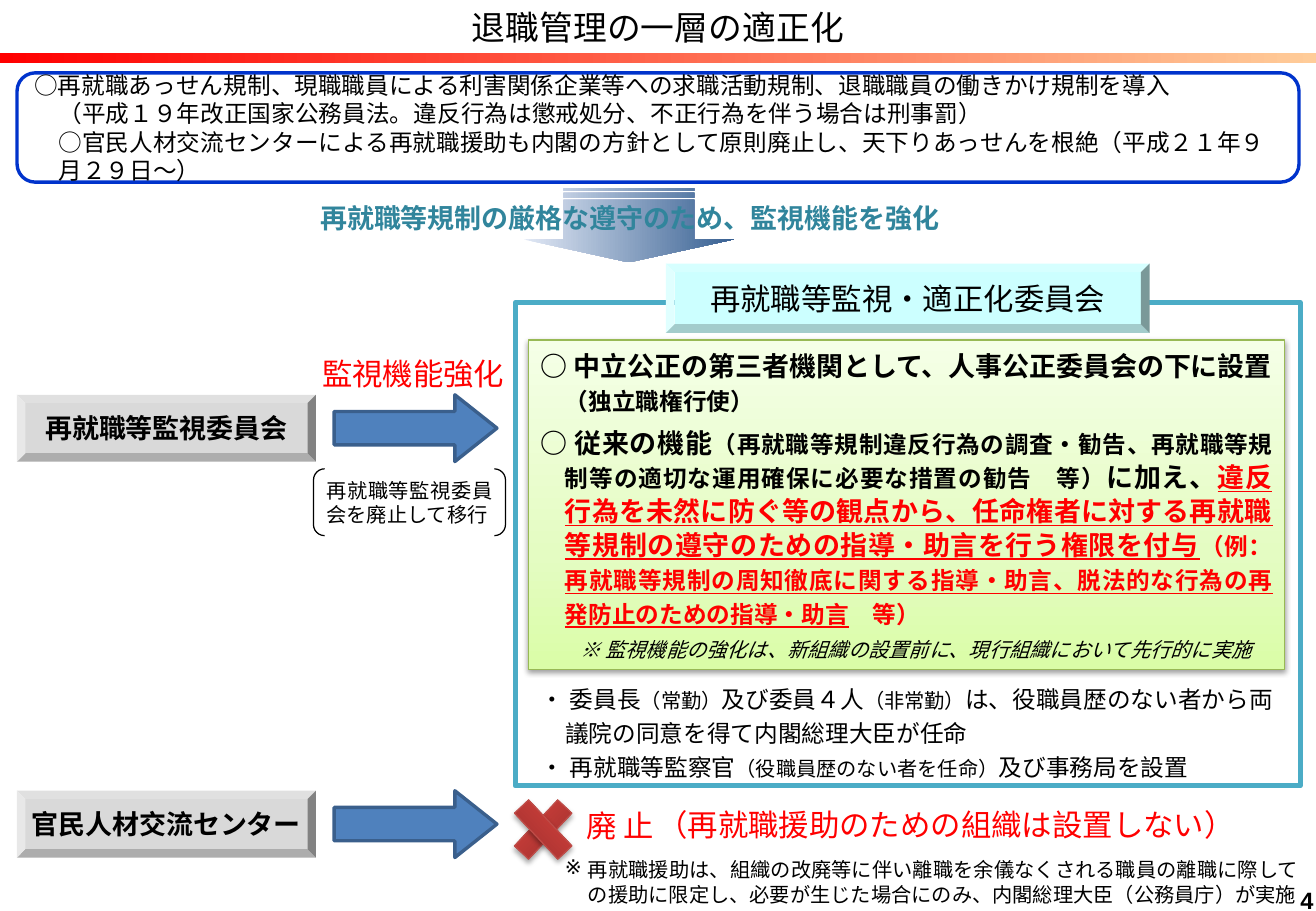
from lxml import etree
from pptx import Presentation
from pptx.dml.color import RGBColor
from pptx.enum.shapes import MSO_SHAPE
from pptx.enum.text import MSO_ANCHOR, MSO_AUTO_SIZE, PP_ALIGN
from pptx.oxml import parse_xml
from pptx.oxml.ns import nsdecls, qn
from pptx.util import Pt

PX = 9144
GOTHIC = "Noto Sans CJK JP"
COLORS = {
    "black": "000000", "white": "FFFFFF", "red": "FF0000", "peach": "FFCC99",
    "gray": "D9D9D9", "cyan": "CCFFFF", "blue": "4F81BD", "blue edge": "3A5F8C",
    "navy": "0033CC", "teal": "4BACC6", "teal text": "31859C",
    "mist": "E1E8F5", "steel": "376092", "green edge": "98B955",
    "green": "DAFDA7", "green mid": "E4FCC2", "green pale": "F5FFE7",
    "cross edge": "BF4C48", "cross dark": "9C2F2D", "cross mid": "CB3E3A", "cross": "CE3B37",
}
CROSS_BLEND = [(0, "cross dark"), (80, "cross mid"), (100, "cross")]
GREEN_BLEND = [(0, "green"), (35, "green mid"), (100, "green pale")]


def inside(box, left, top, width, height):
    """Return a px frame given relative to the corner of a box."""
    return box[0] + left, box[1] + top, width, height


def emu(frame):
    """Turn a px frame into EMU lengths."""
    return [length * PX for length in frame]


def add_shape(page, kind, frame, fill=None, line=None, weight=1, adjust=()):
    """Add a flat preset shape."""
    shape = page.shapes.add_shape(kind, *emu(frame))
    shape.shadow.inherit = False
    for index, value in enumerate(adjust):
        shape.adjustments[index] = value
    if fill:
        shape.fill.solid()
        shape.fill.fore_color.rgb = RGBColor.from_string(COLORS[fill])
    else:
        shape.fill.background()
    if line:
        shape.line.color.rgb = RGBColor.from_string(COLORS[line])
        shape.line.width = Pt(weight)
    else:
        shape.line.fill.background()
    return shape


def blend(shape, stops, angle, turn=1):
    """Give a shape a linear gradient."""
    marks = "".join(f'<a:gs pos="{place * 1000}"><a:srgbClr val="{COLORS[name]}"/></a:gs>'
                    for place, name in stops)
    gradient = parse_xml(
        f'<a:gradFill {nsdecls("a")} rotWithShape="{turn}"><a:gsLst>{marks}</a:gsLst>'
        f'<a:lin ang="{angle * 60000}" scaled="0"/></a:gradFill>')
    shape.fill.gradient()
    old = shape.element.spPr.find(qn("a:gradFill"))
    old.getparent().replace(old, gradient)


def cast_shadow(shape, opacity, blur, distance):
    """Give a shape a black shadow that falls straight down."""
    shape.element.spPr.find(qn("a:effectLst")).append(parse_xml(
        f'<a:outerShdw {nsdecls("a")} blurRad="{Pt(blur)}" dist="{Pt(distance)}" '
        f'dir="5400000" rotWithShape="0"><a:srgbClr val="{COLORS["black"]}">'
        f'<a:alpha val="{opacity * 1000}"/></a:srgbClr></a:outerShdw>'))


def set_frame(shape, anchor=MSO_ANCHOR.MIDDLE, inset=(10, 5, 10, 5), wrap=True):
    """Set wrapping, anchor and insets of a shape's text and return the shape."""
    frame = shape.text_frame
    frame.auto_size = MSO_AUTO_SIZE.NONE
    frame.word_wrap = wrap
    frame.vertical_anchor = anchor
    frame.margin_left, frame.margin_top, frame.margin_right, frame.margin_bottom = emu(inset)
    return shape


def add_box(page, frame, **layout):
    """Add a text box."""
    return set_frame(page.shapes.add_textbox(*emu(frame)), **layout)


def write(shape, spans, align=PP_ALIGN.LEFT, margin=0, indent=0, line=None, after=0,
          bullet=None, **look):
    """Write one paragraph from a text or from (text, format) spans."""
    frame = shape.text_frame
    para = frame.add_paragraph() if frame.text else frame.paragraphs[0]
    para.alignment = align
    para.space_before, para.space_after = Pt(0), Pt(after)
    if line:
        para.line_spacing = Pt(line)
    settings = para._p.get_or_add_pPr()
    settings.set("marL", str(margin * PX))
    settings.set("indent", str(indent * PX))
    if bullet:
        etree.SubElement(settings, qn("a:buChar")).set("char", bullet)
    for text, change in [(spans, {})] if isinstance(spans, str) else spans:
        if text == "\n":
            para.add_line_break()
            continue
        style = {"size": 14, "font": "Arial", "color": "black", "bold": False,
                 "italic": False, "underline": False, **look, **change}
        span = para.add_run()
        span.text = text
        span.font.size = Pt(style["size"])
        span.font.bold, span.font.italic = style["bold"], style["italic"]
        span.font.underline = style["underline"]
        span.font.color.rgb = RGBColor.from_string(COLORS[style["color"]])
        span.font.name = style["font"]
        etree.SubElement(span._r.get_or_add_rPr(), qn("a:ea")).set("typeface", GOTHIC)


def add_heading(page, box):
    """Place the title and the colour band below it."""
    title = page.shapes.title
    title.left, title.top, title.width, title.height = emu(inside(box, 0, 0, box[2], 44))
    set_frame(title, wrap=False)
    write(title, "退職管理の一層の適正化", PP_ALIGN.CENTER, size=20, font=GOTHIC)
    band = add_shape(page, MSO_SHAPE.RECTANGLE, inside(box, 0, 44, box[2], 8))
    blend(band, [(0, "red"), (100, "peach")], 0)


def add_summary(page, box):
    """Place the rounded box with the measures taken so far."""
    shape = set_frame(add_shape(page, MSO_SHAPE.ROUNDED_RECTANGLE, box, "white", "navy", 2),
                      inset=(10, 8, 10, 8))
    write(shape, [
        ("○再就職あっせん規制、現職職員による利害関係企業等への求職活動規制、退職職員の働きかけ規制を導入", {}),
        ("\n", {}),
        ("（平成１９年改正国家公務員法。違反行為は懲戒処分、不正行為を伴う場合は刑事罰）", {}),
    ], margin=20, indent=-20)
    write(shape, "○官民人材交流センターによる再就職援助も内閣の方針として原則廃止し、"
                 "天下りあっせんを根絶（平成２１年９月２９日～）", margin=20)


def add_purpose(page, box):
    """Place the downward arrow and the statement across it."""
    arrow = add_shape(page, MSO_SHAPE.STRIPED_RIGHT_ARROW, inside(box, 260, -59, 61, 173),
                      adjust=(0.62, 0.31))
    arrow.rotation = 90
    blend(arrow, [(0, "mist"), (100, "steel")], 0, turn=0)
    write(add_box(page, box), "再就職等規制の厳格な遵守のため、監視機能を強化",
          PP_ALIGN.CENTER, size=16, font=GOTHIC, color="teal text", bold=True)


def add_plate(page, frame, text, fill, **look):
    """Place a bevelled name plate."""
    plate = set_frame(add_shape(page, MSO_SHAPE.BEVEL, frame, fill, adjust=(0.125,)), wrap=False)
    write(plate, text, PP_ALIGN.CENTER, **look)


def add_transfer(page, box, name):
    """Place a present body and the arrow to its future."""
    add_plate(page, inside(box, 0, 0, 246, box[3]), name, "gray", size=16, bold=True)
    add_shape(page, MSO_SHAPE.RIGHT_ARROW, inside(box, 261, 0, 134, box[3]),
              "blue", "blue edge", 2, (0.5, 0.63))


def add_transfer_notes(page, box):
    """Place the notes above and below the upper arrow."""
    label = add_box(page, inside(box, 0, 0, 188, 64), inset=(12, 0, 8, 0), wrap=False)
    write(label, "監視機能強化", PP_ALIGN.CENTER, size=18, color="red")
    bracket = set_frame(add_shape(page, MSO_SHAPE.DOUBLE_BRACKET, inside(box, 14, 111, 158, 55),
                                  line="black", weight=0.75), inset=(8, 5, 8, 5))
    write(bracket, "再就職等監視委員会を廃止して移行", PP_ALIGN.JUSTIFY, after=12,
          size=12, font=GOTHIC)


def add_commission(page, box):
    """Place the panel on the new commission."""
    panel = set_frame(add_shape(page, MSO_SHAPE.RECTANGLE, inside(box, 0, 32, 646, 398),
                                "white", "teal", 3), MSO_ANCHOR.BOTTOM, (12, 20, 12, 4))
    small = {"size": 12}
    item = {"margin": 29, "indent": -20, "line": 20, "font": GOTHIC}
    write(panel, [("・ 委員長", {}), ("（常勤）", small), ("及び委員４人", {}), ("（非常勤）", small),
                  ("は、役職員歴のない者から両議院の同意を得て内閣総理大臣が任命", {})], **item)
    write(panel, [("・ 再就職等監察官", {}), ("（役職員歴のない者を任命）", small),
                  ("及び事務局を設置", {})], after=3, **item)
    add_plate(page, inside(box, 124, 0, 398, 57), "再就職等監視・適正化委員会", "cyan", size=18)

    duties = set_frame(add_shape(page, MSO_SHAPE.RECTANGLE, inside(box, 11, 63, 622, 271),
                                 line="green edge", weight=0.75), inset=(10, 4, 10, 4))
    blend(duties, GREEN_BLEND, 270)
    cast_shadow(duties, 38, 3.1, 1.6)
    minor = {"size": 14}
    red = {"color": "red"}
    duty = {"align": PP_ALIGN.JUSTIFY, "margin": 20, "indent": -20, "line": 20,
            "size": 16, "font": GOTHIC, "bold": True}
    write(duties, [("○ 中立公正の第三者機関として、人事公正委員会の下に設置", {}),
                   ("（独立職権行使）", minor)], after=6, **duty)
    write(duties, [
        ("○ 従来の機能", {}),
        ("（再就職等規制違反行為の調査・勧告、再就職等規制等の適切な運用確保に必要な措置の勧告　等）", minor),
        ("に加え、", {}),
        ("違反行為を未然に防ぐ等の観点から、任命権者に対する再就職等規制の遵守のための指導・助言を行う権限を付与",
         {**red, "underline": True}),
        ("（例：", {**red, **minor}),
        ("再就職等規制の周知徹底に関する指導・助言、脱法的な行為の再発防止のための指導・助言",
         {**red, **minor, "underline": True}),
        ("　等）", {**red, **minor}),
    ], **duty)
    write(duties, "※ 監視機能の強化は、新組織の設置前に、現行組織において先行的に実施",
          PP_ALIGN.JUSTIFY, margin=33, line=20, after=6, size=12, italic=True)


def add_abolition(page, box):
    """Place the cross and the text on the abolished centre."""
    for angle in (313.3, 46.7):
        bar = add_shape(page, MSO_SHAPE.RECTANGLE, inside(box, 0, 24, 52, 16),
                        line="cross edge", weight=0.75)
        bar.rotation = angle
        blend(bar, CROSS_BLEND, 270)
        cast_shadow(bar, 35, 3.1, 1.8)
    write(add_box(page, inside(box, 52, 5, 102, 47), wrap=False), "廃 止", size=18, color="red")
    write(add_box(page, inside(box, 121, 4, 473, 47), wrap=False),
          "（再就職援助のための組織は設置しない）", PP_ALIGN.CENTER, size=18, color="red")
    note = add_box(page, inside(box, 34, 55, 624, 40), anchor=MSO_ANCHOR.TOP, inset=(10, 0, 10, 0))
    write(note, "再就職援助は、組織の改廃等に伴い離職を余儀なくされる職員の離職に際しての援助に限定し、"
                "必要が生じた場合にのみ、内閣総理大臣（公務員庁）が実施",
          PP_ALIGN.JUSTIFY, margin=19, indent=-19, bullet="※", size=12, font=GOTHIC)


def main():
    """Build the slide and save it."""
    deck = Presentation()
    deck.slide_width, deck.slide_height = emu((1083, 750))
    page = deck.slides.add_slide(deck.slide_layouts[5])
    add_heading(page, (0, 0, 1083, 52))
    add_summary(page, (14, 60, 1055, 90))
    add_purpose(page, (227, 158, 583, 43))
    add_transfer(page, (14, 325, 395, 55), "再就職等監視委員会")
    add_transfer_notes(page, (244, 275, 188, 166))
    add_commission(page, (424, 217, 646, 430))
    add_transfer(page, (14, 651, 395, 55), "官民人材交流センター")
    add_abolition(page, (421, 651, 658, 95))
    number = add_box(page, (1054, 724, 43, 28), anchor=MSO_ANCHOR.TOP)
    write(number, "4", PP_ALIGN.CENTER, bold=True)
    deck.save("out.pptx")


if __name__ == "__main__":
    main()
